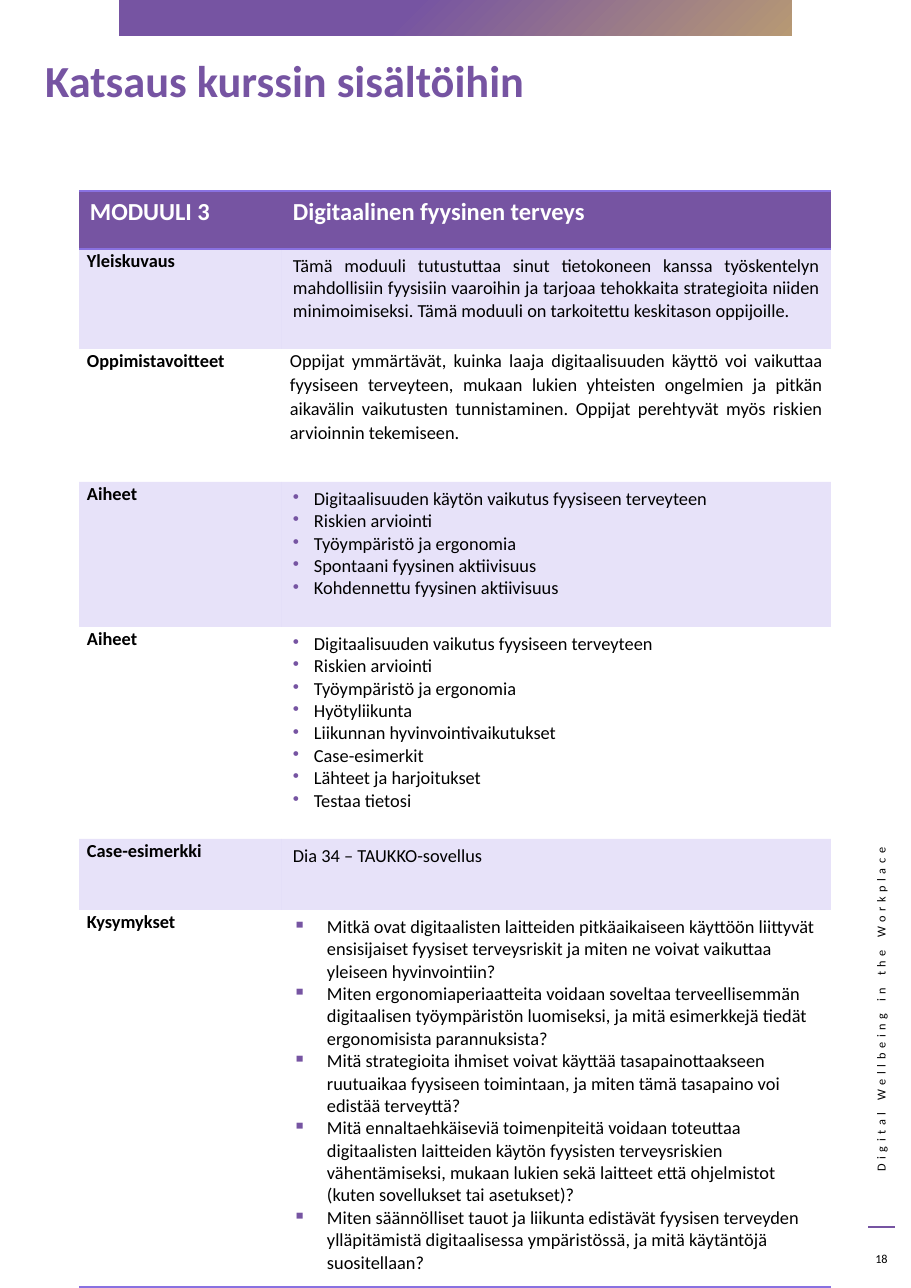
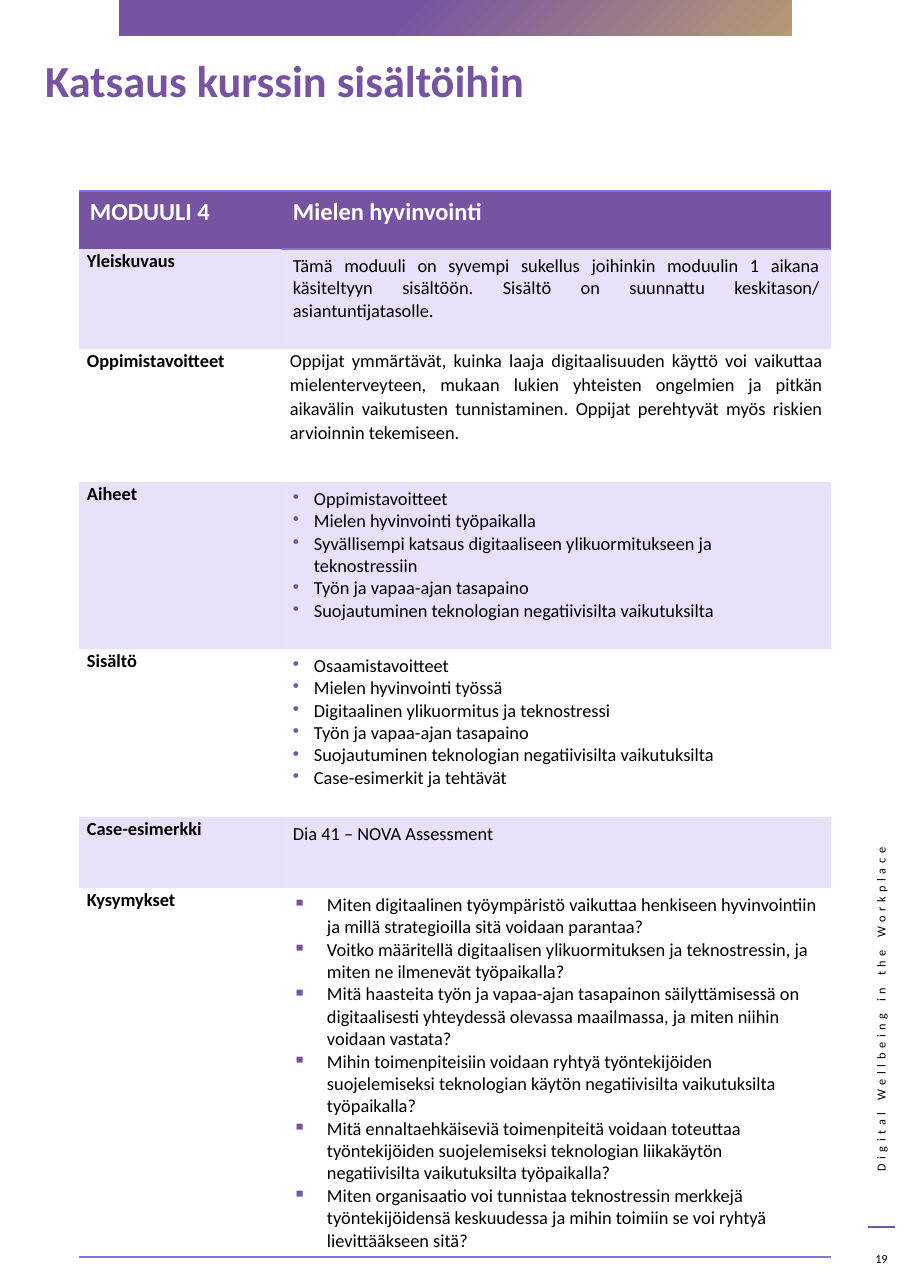
from lxml import etree
from pptx import Presentation
from pptx.dml.color import RGBColor
from pptx.enum.shapes import MSO_CONNECTOR as Connector, MSO_SHAPE as Preset
from pptx.enum.text import MSO_ANCHOR as Anchor, MSO_AUTO_SIZE as AutoSize, PP_ALIGN as Align
from pptx.oxml import parse_xml
from pptx.oxml.ns import nsdecls, qn
from pptx.util import Emu, Pt

EMU_PER_PX = 8298
FONT = "Calibri"
PURPLE, VIOLET, SAND = "7654A2", "8971E1", "B79974"
BLACK, WHITE = "000000", "FFFFFF"
NO_STYLE = "{2D5ABB26-0587-4C30-8999-92F81FD0307C}"
TITLE = "Katsaus kurssin sisältöihin"
PROJECT = "Digital Wellbeing in the Workplace"
COLUMNS = (203, 549)
TIGHT = {"margin_left": 8, "margin_right": 8, "margin_top": 0, "margin_bottom": 0}
LOOSE = {"margin_left": 11, "margin_right": 11, "margin_top": 6, "margin_bottom": 6}
SPACED = {"line_spacing": 1.07, "space_after": Pt(8)}
BULLETS = {"dots": ("•", 21), "squares": ("▪", 34)}

MODULES = [
    {
        "page": "18",
        "header": ("MODUULI 3", "Digitaalinen fyysinen terveys"),
        "label_rule": True,
        "rows": [
            ("Yleiskuvaus", 100, "text", [
                "Tämä moduuli tutustuttaa sinut tietokoneen kanssa työskentelyn mahdollisiin fyysisiin vaaroihin ja tarjoaa tehokkaita strategioita niiden minimoimiseksi. Tämä moduuli on tarkoitettu keskitason oppijoille."]),
            ("Oppimistavoitteet", 133, "spaced", [
                "Oppijat ymmärtävät, kuinka laaja digitaalisuuden käyttö voi vaikuttaa fyysiseen terveyteen, mukaan lukien yhteisten ongelmien ja pitkän aikavälin vaikutusten tunnistaminen. Oppijat perehtyvät myös riskien arvioinnin tekemiseen."]),
            ("Aiheet", 145, "dots", [
                "Digitaalisuuden käytön vaikutus fyysiseen terveyteen",
                "Riskien arviointi",
                "Työympäristö ja ergonomia",
                "Spontaani fyysinen aktiivisuus",
                "Kohdennettu fyysinen aktiivisuus"]),
            ("Aiheet", 212, "dots", [
                "Digitaalisuuden vaikutus fyysiseen terveyteen",
                "Riskien arviointi",
                "Työympäristö ja ergonomia",
                "Hyötyliikunta",
                "Liikunnan hyvinvointivaikutukset",
                "Case-esimerkit",
                "Lähteet ja harjoitukset",
                "Testaa tietosi"]),
            ("Case-esimerkki", 71, "plain", ["Dia 34 – TAUKKO-sovellus"]),
            ("Kysymykset", 377, "squares", [
                "Mitkä ovat digitaalisten laitteiden pitkäaikaiseen käyttöön liittyvät ensisijaiset fyysiset terveysriskit ja miten ne voivat vaikuttaa yleiseen hyvinvointiin?",
                "Miten ergonomiaperiaatteita voidaan soveltaa terveellisemmän digitaalisen työympäristön luomiseksi, ja mitä esimerkkejä tiedät ergonomisista parannuksista?",
                "Mitä strategioita ihmiset voivat käyttää tasapainottaakseen ruutuaikaa fyysiseen toimintaan, ja miten tämä tasapaino voi edistää terveyttä?",
                "Mitä ennaltaehkäiseviä toimenpiteitä voidaan toteuttaa digitaalisten laitteiden käytön fyysisten terveysriskien vähentämiseksi, mukaan lukien sekä laitteet että ohjelmistot (kuten sovellukset tai asetukset)?",
                "Miten säännölliset tauot ja liikunta edistävät fyysisen terveyden ylläpitämistä digitaalisessa ympäristössä, ja mitä käytäntöjä suositellaan?"]),
        ],
    },
    {
        "page": "19",
        "header": ("MODUULI 4", "Mielen hyvinvointi"),
        "label_rule": False,
        "rows": [
            ("Yleiskuvaus", 100, "text", [
                "Tämä moduuli on syvempi sukellus joihinkin moduulin 1 aikana käsiteltyyn sisältöön. Sisältö on suunnattu keskitason/ asiantuntijatasolle."]),
            ("Oppimistavoitteet", 133, "spaced", [
                "Oppijat ymmärtävät, kuinka laaja digitaalisuuden käyttö voi vaikuttaa mielenterveyteen, mukaan lukien yhteisten ongelmien ja pitkän aikavälin vaikutusten tunnistaminen. Oppijat perehtyvät myös riskien arvioinnin tekemiseen."]),
            ("Aiheet", 167, "dots", [
                "Oppimistavoitteet",
                "Mielen hyvinvointi työpaikalla",
                "Syvällisempi katsaus digitaaliseen ylikuormitukseen ja teknostressiin",
                "Työn ja vapaa-ajan tasapaino",
                "Suojautuminen teknologian negatiivisilta vaikutuksilta"]),
            ("Sisältö", 168, "dots", [
                "Osaamistavoitteet",
                "Mielen hyvinvointi työssä",
                "Digitaalinen ylikuormitus ja teknostressi",
                "Työn ja vapaa-ajan tasapaino",
                "Suojautuminen teknologian negatiivisilta vaikutuksilta",
                "Case-esimerkit ja tehtävät"]),
            ("Case-esimerkki", 71, "plain", ["Dia 41 – NOVA Assessment"]),
            ("Kysymykset", 369, "squares", [
                "Miten digitaalinen työympäristö vaikuttaa henkiseen hyvinvointiin ja millä strategioilla sitä voidaan parantaa?",
                "Voitko määritellä digitaalisen ylikuormituksen ja teknostressin, ja miten ne ilmenevät työpaikalla?",
                "Mitä haasteita työn ja vapaa-ajan tasapainon säilyttämisessä on digitaalisesti yhteydessä olevassa maailmassa, ja miten niihin voidaan vastata?",
                "Mihin toimenpiteisiin voidaan ryhtyä työntekijöiden suojelemiseksi teknologian käytön negatiivisilta vaikutuksilta työpaikalla?",
                "Mitä ennaltaehkäiseviä toimenpiteitä voidaan toteuttaa työntekijöiden suojelemiseksi teknologian liikakäytön negatiivisilta vaikutuksilta työpaikalla?",
                "Miten organisaatio voi tunnistaa teknostressin merkkejä työntekijöidensä keskuudessa ja mihin toimiin se voi ryhtyä lievittääkseen sitä?"]),
        ],
    },
]


def px(*lengths):
    """Turn whole px lengths into a list of EMU."""
    return [Emu(length * EMU_PER_PX) for length in lengths]


def color(hex_string):
    """Turn a hex string into a colour."""
    return RGBColor.from_string(hex_string)


def set_values(target, values):
    """Set each attribute of the target from a dict."""
    for name, value in values.items():
        setattr(target, name, value)


def write(frame, texts, size, hex_color=BLACK, bold=False, **paragraph_format):
    """Write one formatted paragraph per text and return the paragraphs."""
    for index, text in enumerate(texts):
        paragraph = frame.paragraphs[0] if index == 0 else frame.add_paragraph()
        set_values(paragraph, paragraph_format)
        run = paragraph.add_run()
        run.text = text
        set_values(run.font, {"name": FONT, "size": Pt(size), "bold": bold})
        run.font.color.rgb = color(hex_color)
    return frame.paragraphs


def add_bullet(paragraph, character, indent):
    """Give a paragraph a purple bullet with a hanging indent in px."""
    properties = paragraph._p.get_or_add_pPr()
    properties.set("marL", str(indent * EMU_PER_PX))
    properties.set("indent", str(-indent * EMU_PER_PX))
    bullet_color = etree.SubElement(properties, qn("a:buClr"))
    etree.SubElement(bullet_color, qn("a:srgbClr"), val=PURPLE)
    etree.SubElement(properties, qn("a:buChar"), char=character)


def add_border(cell, side):
    """Draw a one-point violet border on side T or B of a cell."""
    cell._tc.get_or_add_tcPr().append(parse_xml(
        f'<a:ln{side} {nsdecls("a")} w="12700"><a:solidFill>'
        f'<a:srgbClr val="{VIOLET}"/></a:solidFill></a:ln{side}>'))


def fill_cell(cell, hex_color=None, alpha=None):
    """Fill a cell, optionally at a percentage of opacity, or leave it clear."""
    if hex_color is None:
        cell.fill.background()
        return
    cell.fill.solid()
    cell.fill.fore_color.rgb = color(hex_color)
    if alpha:
        for node in cell._tc.tcPr.findall(qn("a:solidFill") + "/" + qn("a:srgbClr")):
            etree.SubElement(node, qn("a:alpha"), val=str(alpha * 1000))


def set_margins(cell, margins):
    """Set the margins of a cell from px."""
    set_values(cell, dict(zip(margins, px(*margins.values()))))


def add_text(slide, box, text, **paragraph_format):
    """Add a small text box and return it."""
    shape = slide.shapes.add_textbox(*px(*box))
    shape.text_frame.word_wrap = True
    write(shape.text_frame, [text], 8, **paragraph_format)
    return shape


def add_band(slide):
    """Add the gradient band along the top edge."""
    band = slide.shapes.add_shape(Preset.RECTANGLE, *px(119, 0, 673, 36))
    band.shadow.inherit = False
    band.line.fill.background()
    band.fill.background()
    properties = band.element.spPr
    properties.replace(properties.find(qn("a:noFill")), parse_xml(
        f'<a:gradFill {nsdecls("a")} rotWithShape="1"><a:gsLst>'
        f'<a:gs pos="0"><a:srgbClr val="{SAND}"/></a:gs>'
        f'<a:gs pos="58000"><a:srgbClr val="{PURPLE}"/></a:gs></a:gsLst>'
        '<a:path path="circle"><a:fillToRect l="100000" t="100000"/></a:path>'
        '</a:gradFill>'))


def add_rule(slide):
    """Add the short line above the page number."""
    rule = slide.shapes.add_connector(Connector.STRAIGHT, *px(895, 1227, 868, 1227))
    rule.line.color.rgb = color(PURPLE)
    rule.line.width = Pt(0.75)
    etree.SubElement(rule.element.spPr, qn("a:effectLst"))


def add_furniture(slide, page):
    """Add the band, side text, rule and page number."""
    project = add_text(slide, (690, 1015, 382, 26), PROJECT, alignment=Align.RIGHT)
    project.rotation = 270
    project.text_frame.auto_size = AutoSize.SHAPE_TO_FIT_TEXT
    for run in project.text_frame.paragraphs[0].runs:
        run.font._element.set("spc", "300")
    add_rule(slide)
    add_band(slide)
    number = add_text(slide, (860, 1243, 43, 32), page, alignment=Align.CENTER)
    number.text_frame.vertical_anchor = Anchor.MIDDLE


def set_title(slide):
    """Place and format the title."""
    title = slide.shapes.title
    set_values(title, dict(zip(("left", "top", "width", "height"), px(34, 48, 784, 90))))
    set_values(title.text_frame, {"word_wrap": True, "auto_size": AutoSize.NONE,
                                  "vertical_anchor": Anchor.TOP})
    write(title.text_frame, [TITLE], 29, PURPLE, True, alignment=Align.LEFT)


def fill_content(cell, kind, texts):
    """Write the right-hand cell of a row according to its kind."""
    set_margins(cell, TIGHT if kind == "spaced" else LOOSE)
    justified = kind in ("text", "spaced")
    paragraphs = write(cell.text_frame, texts, 12,
                       alignment=Align.JUSTIFY if justified else Align.LEFT,
                       **(SPACED if kind == "spaced" else {}))
    if kind in BULLETS:
        for paragraph in paragraphs:
            add_bullet(paragraph, *BULLETS[kind])


def add_module_table(slide, module):
    """Add the table that describes one module."""
    rows = module["rows"]
    heights = [58] + [row[1] for row in rows]
    frame = slide.shapes.add_table(len(heights), len(COLUMNS),
                                   *px(79, 191, sum(COLUMNS), sum(heights)))
    frame.element.xpath(".//a:tableStyleId")[0].text = NO_STYLE
    table = frame.table
    set_values(table, {"first_row": False, "horz_banding": False})
    for column, width in zip(table.columns, px(*COLUMNS)):
        column.width = width
    for row, height in zip(table.rows, px(*heights)):
        row.height = height

    for index, text in enumerate(module["header"]):
        cell = table.cell(0, index)
        set_margins(cell, LOOSE)
        write(cell.text_frame, [text], 16, WHITE, True)
        add_border(cell, "T")
        if index or module["label_rule"]:
            add_border(cell, "B")
        fill_cell(cell, PURPLE)

    for index, (label, _, kind, texts) in enumerate(rows, 1):
        label_cell, content_cell = table.cell(index, 0), table.cell(index, 1)
        set_margins(label_cell, TIGHT)
        write(label_cell.text_frame, [label], 12, bold=True, **SPACED)
        fill_content(content_cell, kind, texts)
        for cell in (label_cell, content_cell):
            if index == len(rows):
                add_border(cell, "B")
            fill_cell(cell, VIOLET if index % 2 else None, 20)


def main():
    """Build one slide per module and save the presentation."""
    presentation = Presentation()
    presentation.slide_width, presentation.slide_height = px(911, 1288)
    for module in MODULES:
        slide = presentation.slides.add_slide(presentation.slide_layouts[5])
        add_furniture(slide, module["page"])
        set_title(slide)
        add_module_table(slide, module)
    presentation.save("out.pptx")


if __name__ == "__main__":
    main()
